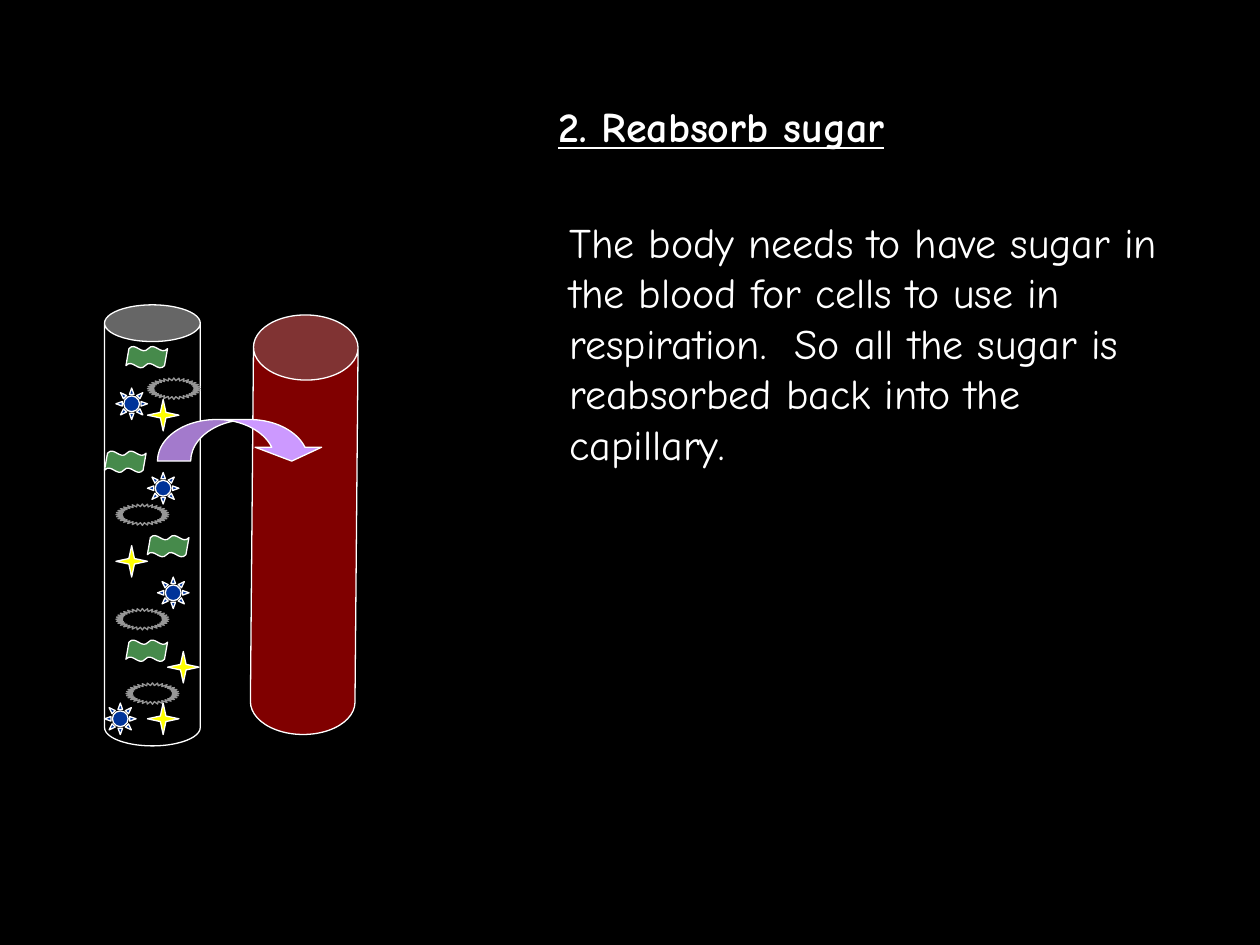
from typing import NamedTuple

from lxml.etree import SubElement
from pptx import Presentation
from pptx.dml.color import RGBColor
from pptx.enum.shapes import MSO_SHAPE
from pptx.enum.text import MSO_ANCHOR, MSO_AUTO_SIZE, PP_ALIGN
from pptx.oxml.ns import qn
from pptx.shapes.autoshape import Shape
from pptx.util import Inches, Pt

BLACK = RGBColor(0x00, 0x00, 0x00)
WHITE = RGBColor(0xFF, 0xFF, 0xFF)
RED = RGBColor(0xFF, 0x00, 0x00)
BLUE = RGBColor(0x00, 0x33, 0x99)
YELLOW = RGBColor(0xFF, 0xFF, 0x00)
GREEN = RGBColor(0x46, 0x8A, 0x4B)
GRAY = RGBColor(0x96, 0x96, 0x96)
LILAC = RGBColor(0xCC, 0x99, 0xFF)
FONT = "Comic Neue"


class Style(NamedTuple):
    preset: MSO_SHAPE
    width: float
    height: float
    adjustments: tuple[float, ...]
    fill: RGBColor
    line: RGBColor = WHITE


class Placement(NamedTuple):
    style: Style
    left: float
    top: float


CAPILLARY = Style(MSO_SHAPE.CAN, 0.83, 3.33, (0.623,), RED)
TUBULE = Style(MSO_SHAPE.CAN, 0.76, 3.5, (0.383,), BLACK)
SUN = Style(MSO_SHAPE.SUN, 0.25, 0.25, (0.25,), BLUE)
STAR = Style(MSO_SHAPE.STAR_4_POINT, 0.25, 0.25, (0.125,), YELLOW)
WAVE = Style(MSO_SHAPE.DOUBLE_WAVE, 0.33, 0.17, (0.103, -0.036), GREEN)
RING = Style(MSO_SHAPE.STAR_32_POINT, 0.42, 0.17, (0.375,), BLACK, GRAY)
ARROW = Style(MSO_SHAPE.CURVED_DOWN_ARROW, 1.33, 0.33, (0.8, 1.6, 0.333), LILAC)

TUBULE_CONTENTS = [
    Placement(TUBULE, 0.83, 2.42),
    Placement(SUN, 0.92, 3.08),
    Placement(SUN, 1.17, 3.75),
    Placement(STAR, 0.92, 4.33),
    Placement(STAR, 1.17, 3.17),
    Placement(WAVE, 1, 5.08),
    Placement(WAVE, 0.83, 3.58),
    Placement(RING, 0.92, 4.83),
    Placement(RING, 1, 5.42),
    Placement(WAVE, 1.17, 4.25),
    Placement(WAVE, 1, 2.75),
    Placement(SUN, 0.83, 5.58),
    Placement(SUN, 1.25, 4.58),
    Placement(RING, 0.92, 4),
    Placement(RING, 1.17, 3),
    Placement(STAR, 1.17, 5.58),
    Placement(STAR, 1.33, 5.17),
]


def draw(shapes, placement: Placement) -> Shape:
    style = placement.style
    shape = shapes.add_shape(
        style.preset, Inches(placement.left), Inches(placement.top),
        Inches(style.width), Inches(style.height),
    )
    for index, value in enumerate(style.adjustments):
        shape.adjustments[index] = value
    shape.shadow.inherit = False
    shape.fill.solid()
    shape.fill.fore_color.rgb = style.fill
    shape.line.color.rgb = style.line
    shape.line.width = Pt(0.75)
    return shape


def set_opacity(shape: Shape, percent: int) -> None:
    color = shape.fill._xPr.find(qn("a:solidFill"))[0]
    SubElement(color, qn("a:alpha")).set("val", str(percent * 1000))


def write(shape: Shape, text: str, heading: bool = False) -> None:
    frame = shape.text_frame
    frame.word_wrap = True
    frame.auto_size = MSO_AUTO_SIZE.SHAPE_TO_FIT_TEXT
    frame.vertical_anchor = MSO_ANCHOR.TOP
    paragraph = frame.paragraphs[0]
    paragraph.alignment = PP_ALIGN.LEFT
    run = paragraph.add_run()
    run.text = text
    run.font.name = FONT
    run.font.size = Pt(24)
    run.font.bold = heading
    run.font.underline = heading
    run.font.color.rgb = WHITE


def main() -> None:
    presentation = Presentation()
    presentation.slide_width = Inches(10)
    presentation.slide_height = Inches(7.5)
    slide = presentation.slides.add_slide(
        presentation.slide_layouts.get_by_name("Title Only"))
    slide.background.fill.solid()
    slide.background.fill.fore_color.rgb = BLACK

    title = slide.shapes.title
    title.left, title.top = Inches(4.33), Inches(0.75)
    title.width, title.height = Inches(5.08), Inches(0.5)
    write(title, "2. Reabsorb sugar", heading=True)

    body = slide.shapes.add_textbox(
        Inches(4.42), Inches(1.67), Inches(5.08), Inches(2.1))
    write(body, "The body needs to have sugar in the blood for cells to use in "
                "respiration.  So all the sugar is reabsorbed back into the "
                "capillary.")

    capillary = draw(slide.shapes, Placement(CAPILLARY, 2, 2.5))
    capillary.rotation = 0.5
    set_opacity(capillary, 50)

    tubule = slide.shapes.add_group_shape()
    for placement in TUBULE_CONTENTS:
        draw(tubule.shapes, placement)

    draw(slide.shapes, Placement(ARROW, 1.25, 3.33))
    presentation.save("out.pptx")


if __name__ == "__main__":
    main()
